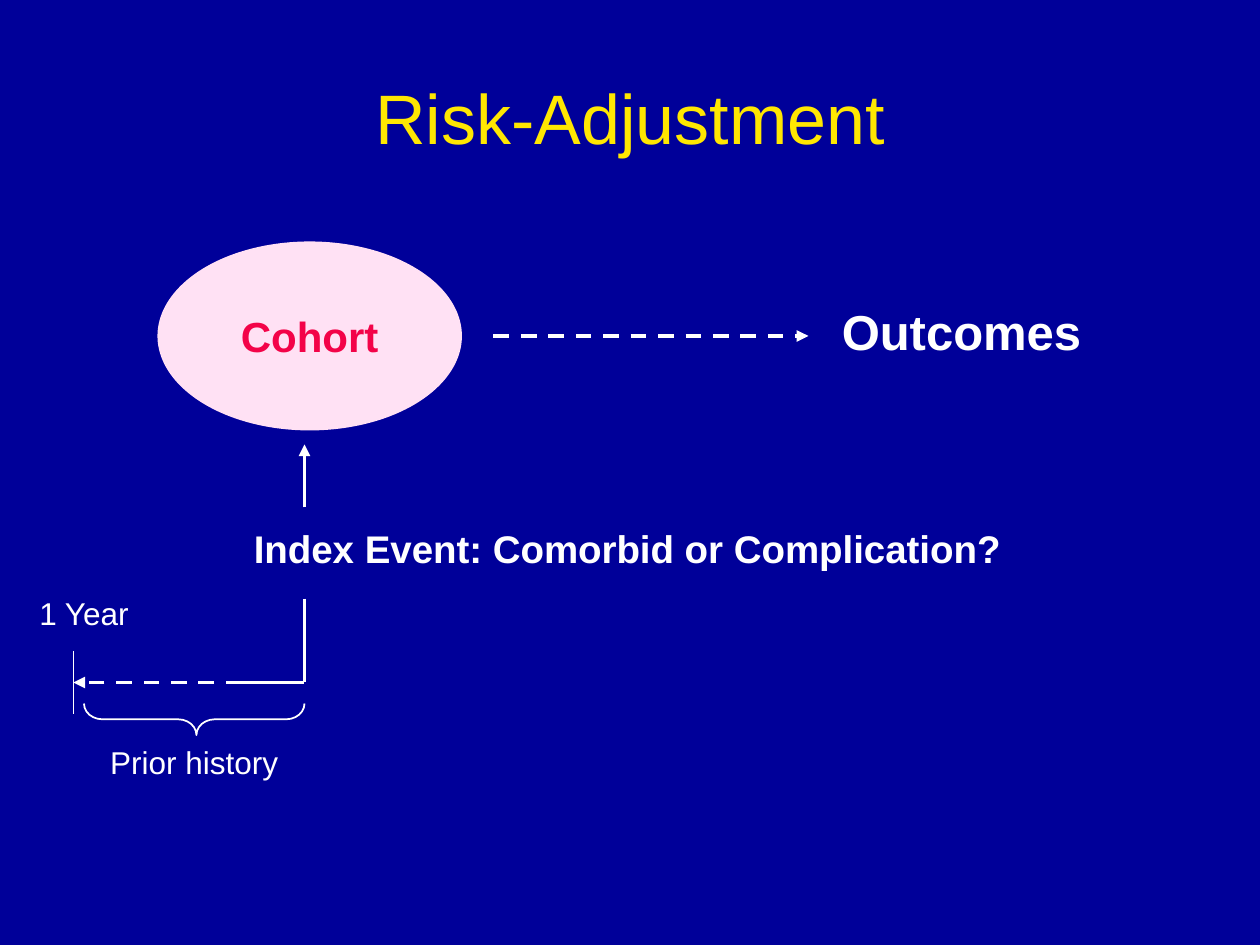
from pptx import Presentation
from pptx.dml.color import RGBColor
from pptx.enum.dml import MSO_LINE_DASH_STYLE as Dash
from pptx.enum.shapes import MSO_CONNECTOR as Connector, MSO_SHAPE as Shape
from pptx.enum.text import MSO_ANCHOR as Anchor, PP_ALIGN as Align
from pptx.oxml.ns import qn
from pptx.util import Pt
from lxml.etree import SubElement

COLORS = {
    "background": "000099",
    "title": "FFE701",
    "white": "FFFFFF",
    "ellipse": "FFE1F4",
    "cohort": "F30348",
}


class SlideBuilder:
    """Holds the style and the current slide."""

    font = "Arial"
    line_width = 2.25

    def __init__(self, slide):
        self.slide = slide
        fill = slide.background.fill
        fill.solid()
        fill.fore_color.rgb = self.color("background")

    def color(self, name):
        return RGBColor.from_string(COLORS[name])

    def set_text(self, frame, words, size, color="white", bold=False,
                 align=Align.CENTER, anchor=Anchor.TOP, wrap=True):
        frame.text = words
        frame.word_wrap = wrap
        frame.vertical_anchor = anchor
        para = frame.paragraphs[0]
        para.alignment = align
        font = para.runs[0].font
        font.name, font.size, font.bold = self.font, Pt(size), bold
        font.color.rgb = self.color(color)

    def text(self, words, left, top, width, height, size, **style):
        box = self.slide.shapes.add_textbox(
            Pt(left), Pt(top), Pt(width), Pt(height))
        self.set_text(box.text_frame, words, size, **style)

    def line(self, start, end, width=line_width, dashed=False, arrow=False):
        points = [Pt(value) for value in (*start, *end)]
        connector = self.slide.shapes.add_connector(Connector.STRAIGHT, *points)
        connector.line.color.rgb = self.color("white")
        connector.line.width = Pt(width)
        if dashed:
            connector.line.dash_style = Dash.DASH
        properties = connector._element.spPr
        if arrow:
            SubElement(properties.find(qn("a:ln")), qn("a:tailEnd"), type="triangle")
        SubElement(properties, qn("a:effectLst"))

    def ellipse(self, words, left, top, width, height, size, **style):
        oval = self.slide.shapes.add_shape(
            Shape.OVAL, Pt(left), Pt(top), Pt(width), Pt(height))
        oval.shadow.inherit = False
        oval.fill.solid()
        oval.fill.fore_color.rgb = self.color("ellipse")
        oval.line.fill.background()
        self.set_text(oval.text_frame, words, size, anchor=Anchor.MIDDLE,
                      wrap=False, **style)

    def brace_below(self, left, top, length, depth):
        # A left brace turned about its centre so that it points down
        brace = self.slide.shapes.add_shape(
            Shape.LEFT_BRACE, Pt(left + (length - depth) / 2),
            Pt(top - (length - depth) / 2), Pt(depth), Pt(length))
        brace.rotation = 270
        brace.adjustments[0] = 0.58
        brace.adjustments[1] = 0.51
        brace.shadow.inherit = False
        brace.fill.background()
        brace.line.color.rgb = self.color("white")
        brace.line.width = Pt(1)


def main():
    deck = Presentation()
    deck.slide_width, deck.slide_height = Pt(720), Pt(540)
    page = SlideBuilder(deck.slides.add_slide(deck.slide_layouts[6]))

    # Title
    page.text("Risk-Adjustment", 36, 21.6, 648, 90, 40,
              color="title", anchor=Anchor.MIDDLE)

    # Prior history timeline
    index_x, solid_x, year_x, history_y = 174, 138, 42, 390
    page.line((index_x, 342), (index_x, history_y))
    page.line((solid_x, history_y), (year_x, history_y), dashed=True, arrow=True)
    page.line((solid_x, history_y), (index_x, history_y))
    page.line((year_x, history_y - 18), (year_x, history_y + 18), width=0.75)
    page.brace_below(48, 402, 126, 18)
    page.text("Prior history", 48, 421, 126, 29, 18)
    page.text("1 Year", 12, 336, 72, 29, 18)

    # Index event
    page.line((index_x, 290), (index_x, 254), arrow=True)
    page.text("Index Event: Comorbid or Complication?", 138, 296.6, 468, 34, 22,
              bold=True, align=Align.LEFT)

    # Cohort and its outcomes
    page.text("Outcomes", 474, 169, 210, 41, 28, bold=True, align=Align.LEFT)
    page.ellipse("Cohort", 90, 138, 174, 108, 24, color="cohort", bold=True)
    page.line((282, 192), (462, 192), dashed=True, arrow=True)

    deck.save("out.pptx")


if __name__ == "__main__":
    main()
